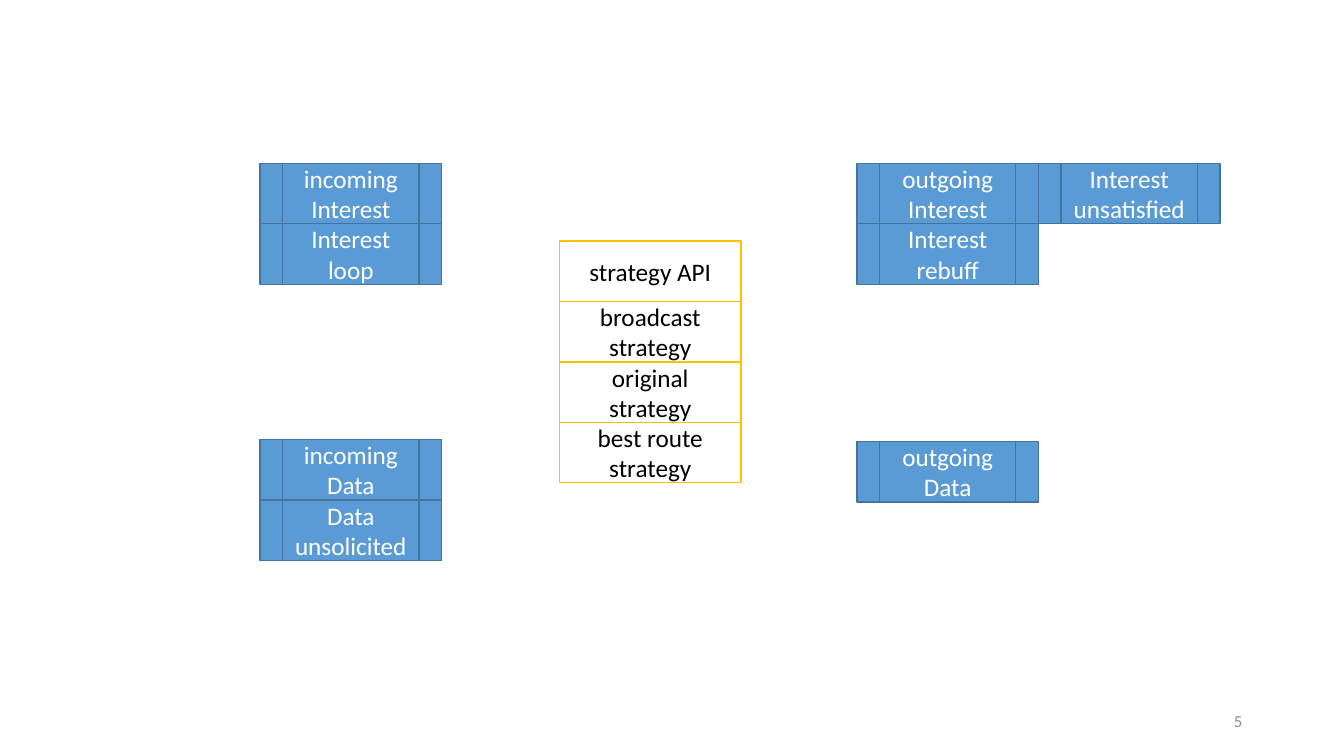
from dataclasses import dataclass

from pptx import Presentation
from pptx.dml.color import RGBColor
from pptx.enum.shapes import MSO_SHAPE
from pptx.enum.text import MSO_ANCHOR, PP_ALIGN
from pptx.util import Inches, Pt

PROCESS = MSO_SHAPE.FLOWCHART_PREDEFINED_PROCESS
RECTANGLE = MSO_SHAPE.RECTANGLE
MIDDLE = MSO_ANCHOR.MIDDLE
CENTER = PP_ALIGN.CENTER
RIGHT = PP_ALIGN.RIGHT
BLANK_LAYOUT = 6
BOX_WIDTH, BOX_HEIGHT = 1.8, 0.6


@dataclass(frozen=True)
class Theme:
    font: str = "Calibri"
    label_size: int = 18
    number_size: int = 12
    line_width: int = 1
    pipeline: tuple = ("5B9BD5", "43739E", "FFFFFF")
    strategy: tuple = ("FFFFFF", "FFC000", "000000")
    number_color: str = "8C8C8C"


class PipelineSlide:
    """Draws forwarding pipelines and strategies on one slide."""

    def __init__(self, slide, theme):
        self.slide = slide
        self.theme = theme

    def set_text(self, frame, text, size, color, align):
        frame.word_wrap = True
        frame.vertical_anchor = MIDDLE
        paragraph = frame.paragraphs[0]
        paragraph.text = text
        paragraph.alignment = align
        paragraph.font.name = self.theme.font
        paragraph.font.size = Pt(size)
        paragraph.font.color.rgb = RGBColor.from_string(color)

    def box(self, left, top, label, outline, colors):
        fill, line, text_color = colors
        box = self.slide.shapes.add_shape(
            outline, Inches(left), Inches(top), Inches(BOX_WIDTH), Inches(BOX_HEIGHT))
        box.shadow.inherit = False
        box.fill.solid()
        box.fill.fore_color.rgb = RGBColor.from_string(fill)
        box.line.color.rgb = RGBColor.from_string(line)
        box.line.width = Pt(self.theme.line_width)
        self.set_text(box.text_frame, label, self.theme.label_size, text_color, CENTER)

    def stack(self, left, top, labels, outline, colors):
        for row, label in enumerate(labels):
            self.box(left, top + row * BOX_HEIGHT, label, outline, colors)

    def pipelines(self, left, top, *labels):
        self.stack(left, top, labels, PROCESS, self.theme.pipeline)

    def strategies(self, left, top, *labels):
        self.stack(left, top, labels, RECTANGLE, self.theme.strategy)

    def page_number(self, number):
        page = self.slide.shapes.add_textbox(
            Inches(9.42), Inches(6.95), Inches(3), Inches(0.4))
        self.set_text(page.text_frame, number, self.theme.number_size,
                      self.theme.number_color, RIGHT)


def main():
    deck = Presentation()
    deck.slide_width, deck.slide_height = Inches(13.33), Inches(7.5)
    slide = deck.slides.add_slide(deck.slide_layouts[BLANK_LAYOUT])
    diagram = PipelineSlide(slide, Theme())

    incoming_left, strategy_left, outgoing_left = 2.58, 5.55, 8.5
    interest_top = 1.62
    diagram.page_number("5")
    diagram.pipelines(incoming_left, interest_top, "incoming Interest", "Interest loop")
    diagram.pipelines(incoming_left, 4.36, "incoming Data", "Data unsolicited")
    diagram.pipelines(outgoing_left, interest_top, "outgoing Interest", "Interest rebuff")
    diagram.pipelines(outgoing_left + BOX_WIDTH, interest_top, "Interest unsatisfied")
    diagram.pipelines(outgoing_left, 4.38, "outgoing Data")
    diagram.strategies(strategy_left, 2.39, "strategy API", "broadcast strategy",
                       "original strategy", "best route strategy")
    deck.save("out.pptx")


if __name__ == "__main__":
    main()
